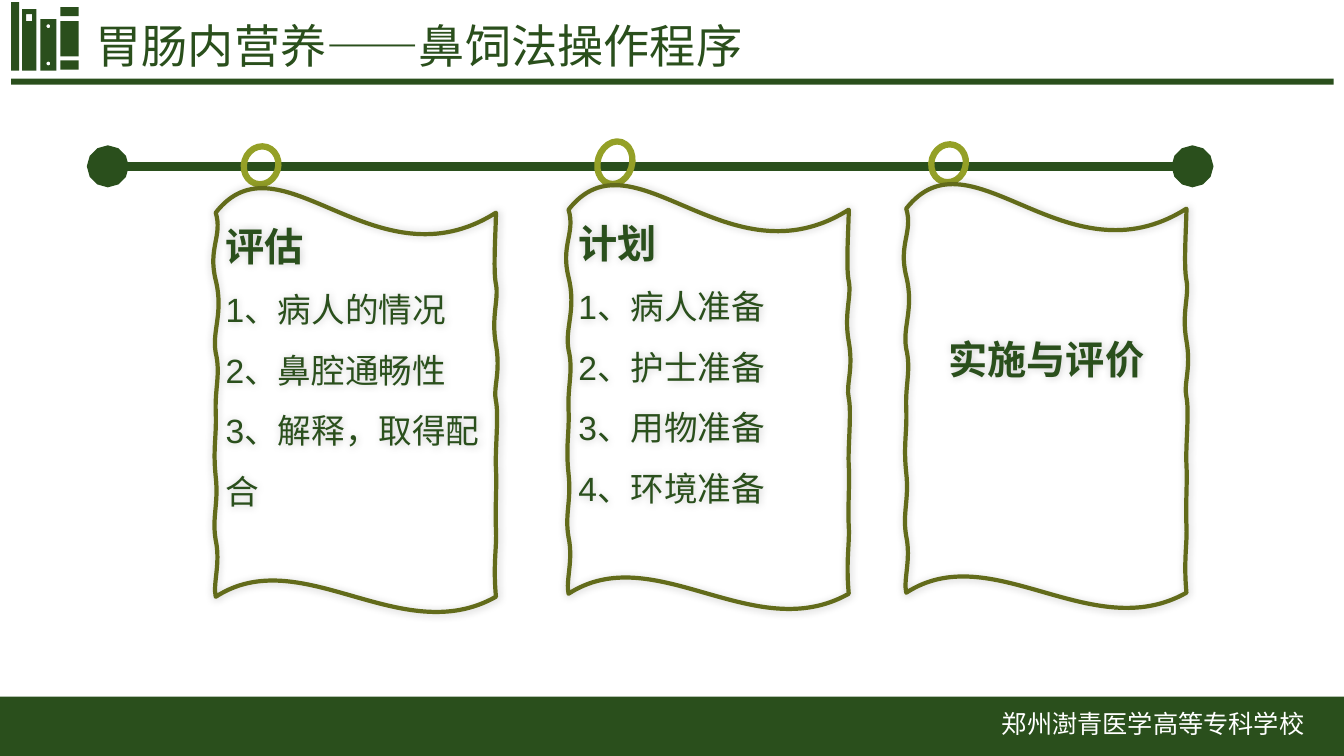
from dataclasses import dataclass

import pptx
import pptx.dml.color
import pptx.enum.shapes
import pptx.enum.text
import pptx.oxml
import pptx.oxml.ns
import pptx.util
from pptx.util import Inches

SHAPE = pptx.enum.shapes.MSO_SHAPE
ALIGN = pptx.enum.text.PP_ALIGN
ANCHOR = pptx.enum.text.MSO_ANCHOR
COLORS = {"green": "2A4F1C", "ring": "94A027", "edge": "626B1A", "white": "FFFFFF", "shadow": "000000"}
A_NS = pptx.oxml.ns.nsdecls("a")

Point = tuple[float, float]
Box = tuple[float, float, float, float]
# A start point, then segments: one point for a line, three for a Bezier curve
Contour = tuple[Point, list[tuple[Point, ...]]]


@dataclass
class Sheet:
    left: float
    top: float
    heading: str
    items: list[str]
    ring: Box
    align: ALIGN = ALIGN.LEFT
    inset_top: float = 0.05


def rect_contour(left: float, top: float, width: float, height: float) -> Contour:
    right, bottom = left + width, top + height
    return (left, top), [((right, top),), ((right, bottom),), ((left, bottom),)]


def dot_contour(x: float, y: float, radius: float = 0.02) -> Contour:
    k = radius * 0.55
    r = radius
    return (x, y - r), [
        ((x + k, y - r), (x + r, y - k), (x + r, y)),
        ((x + r, y + k), (x + k, y + r), (x, y + r)),
        ((x - k, y + r), (x - r, y + k), (x - r, y)),
        ((x - r, y - k), (x - k, y - r), (x, y - r)),
    ]


BARS: list[Box] = [
    (0.11, 0.78, 13.12, 0.06),  # title rule
    (0.11, 0.02, 0.08, 0.68),  # books
    (0.6, 0.6, 0.18, 0.09),
    (0.6, 0.21, 0.18, 0.35),
    (0.6, 0.07, 0.18, 0.09),
    (0, 6.91, 13.333, 0.59),  # footer band
]

BOOKS_WITH_HOLES: list[tuple[Box, list[Contour]]] = [
    ((0.4, 0.19, 0.16, 0.51), [dot_contour(0.08, 0.07), dot_contour(0.08, 0.44)]),
    ((0.22, 0.09, 0.14, 0.61), [rect_contour(0.04, 0.05, 0.06, 0.07)]),
]

SHEETS = [
    Sheet(2.14, 1.92, "评估", ["1、病人的情况", "2、鼻腔通畅性", "3、解释，取得配合"],
          (2.42, 1.45, 0.34, 0.38)),
    Sheet(5.64, 1.89, "计划", ["1、病人准备", "2、护士准备", "3、用物准备", "4、环境准备"],
          (5.93, 1.4, 0.34, 0.43)),
    Sheet(8.99, 1.88, "实施与评价", [], (9.24, 1.43, 0.34, 0.38), ALIGN.CENTER, 1.21),
]

SHEET_SIZE = (2.78, 4.19)
SHEET_OUTLINE: Contour = (0, 0.19), [
    ((0.64, -0.63), (1.58, 0.95), (2.78, 0.19)),
    ((2.78, 0.34), (2.75, 0.76), (2.78, 0.9)),
    ((2.81, 1.05), (2.73, 1.22), (2.78, 1.5)),
    ((2.83, 1.78), (2.75, 1.92), (2.78, 2.06)),
    ((2.81, 2.2), (2.77, 2.55), (2.78, 2.73)),
    ((2.79, 2.91), (2.77, 3.14), (2.78, 3.33)),
    ((2.79, 3.51), (2.75, 3.67), (2.78, 4)),
    ((1.84, 4.53), (0.85, 3.45), (0, 4)),
    ((-0.03, 3.87), (0.05, 3.67), (0, 3.44)),
    ((-0.04, 3.21), (0.03, 3.08), (0, 2.81)),
    ((-0.03, 2.53), (0.01, 2.41), (0, 2.17)),
    ((-0.01, 1.93), (0.05, 1.79), (0, 1.58)),
    ((-0.04, 1.36), (0.08, 1.19), (0, 0.86)),
    ((-0.08, 0.54), (0.07, 0.42), (0, 0.19)),
]


def rgb(name: str) -> pptx.dml.color.RGBColor:
    return pptx.dml.color.RGBColor.from_string(COLORS[name])


def write(p, text: str, *, size: float, font: str = "Arial", color: str = "green",
          bold: bool = False, align: ALIGN = ALIGN.LEFT, spacing: float = 1.0) -> None:
    p.alignment = align
    p.line_spacing = spacing
    r = p.add_run()
    r.text = text
    r.font.size = pptx.util.Pt(size)
    r.font.name = font
    r.font.bold = bold
    r.font.color.rgb = rgb(color)


def add_label(shapes, box: Box, text: str, anchor: ANCHOR, bottom: float = 0.05, **fmt) -> None:
    tf = shapes.add_textbox(*map(Inches, box)).text_frame
    tf.word_wrap = True
    tf.vertical_anchor = anchor
    tf.margin_bottom = Inches(bottom)
    write(tf.paragraphs[0], text, **fmt)


def fill_plain(sp) -> None:
    sp.shadow.inherit = False
    sp.fill.solid()
    sp.fill.fore_color.rgb = rgb("green")
    sp.line.fill.background()


def outline(sp, color: str, width: float) -> None:
    """Leave the shape unfilled with a plain line."""
    sp.fill.background()
    sp.line.color.rgb = rgb(color)
    sp.line.width = pptx.util.Pt(width)
    sp.shadow.inherit = False


def add_freeform(shapes, box: Box, contours: list[Contour]):
    """Build a freeform whose contours, relative to the box, may hold curves."""
    left, top, width, height = map(Inches, box)
    builder = shapes.build_freeform(left, top)
    builder.add_line_segments([(left + width, top), (left + width, top + height)])
    sp = builder.convert_to_shape()
    geometry = next(sp._element.iter(pptx.oxml.ns.qn("a:path")))
    for child in list(geometry):
        geometry.remove(child)

    def add_step(tag: str, points: tuple[Point, ...]) -> None:
        pts = "".join(f'<a:pt x="{Inches(x)}" y="{Inches(y)}"/>' for x, y in points)
        geometry.append(pptx.oxml.parse_xml(f"<a:{tag} {A_NS}>{pts}</a:{tag}>"))

    for start, segments in contours:
        add_step("moveTo", (start,))
        for points in segments:
            add_step("cubicBezTo" if len(points) == 3 else "lnTo", points)
        add_step("close", ())
    return sp


def add_rod(shapes) -> None:
    rod = shapes.add_connector(pptx.enum.shapes.MSO_CONNECTOR.STRAIGHT,
                               Inches(1.07), Inches(1.65), Inches(11.83), Inches(1.65))
    rod.line.color.rgb = rgb("green")
    rod.line.width = pptx.util.Pt(6)
    ln = rod.line._get_or_add_ln()
    for end in ("headEnd", "tailEnd"):
        ln.append(pptx.oxml.parse_xml(f'<a:{end} {A_NS} type="oval" w="lg" len="lg"/>'))
    rod._element.spPr.append(pptx.oxml.parse_xml(f"<a:effectLst {A_NS}/>"))


def add_ring(shapes, box: Box) -> None:
    sp = shapes.add_shape(SHAPE.FLOWCHART_CONNECTOR, *map(Inches, box))
    sp.rotation = 17.4
    outline(sp, "ring", 4.5)


def add_sheet(shapes, sheet: Sheet) -> None:
    sp = add_freeform(shapes, (sheet.left, sheet.top, *SHEET_SIZE), [SHEET_OUTLINE])
    outline(sp, "edge", 3)
    effects = sp._element.spPr.find(pptx.oxml.ns.qn("a:effectLst"))
    effects.append(pptx.oxml.parse_xml(
        f'<a:outerShdw {A_NS} blurRad="76200" dist="0" dir="18900000" algn="bl" rotWithShape="0">'
        f'<a:srgbClr val="{COLORS["shadow"]}"><a:alpha val="20000"/></a:srgbClr></a:outerShdw>'))
    tf = sp.text_frame
    tf.word_wrap = True
    tf.vertical_anchor = ANCHOR.TOP
    tf.margin_top = Inches(sheet.inset_top)
    write(tf.paragraphs[0], sheet.heading, size=28, bold=True, align=sheet.align, spacing=1.5)
    for item in sheet.items:
        write(tf.add_paragraph(), item, size=24, align=sheet.align, spacing=1.5)


def main() -> None:
    prs = pptx.Presentation()
    prs.slide_width, prs.slide_height = Inches(13.333), Inches(7.5)
    s = prs.slides.add_slide(prs.slide_layouts[6])
    for bar in BARS:
        fill_plain(s.shapes.add_shape(SHAPE.RECTANGLE, *map(Inches, bar)))
    for box, holes in BOOKS_WITH_HOLES:
        fill_plain(add_freeform(s.shapes, box, [*holes, rect_contour(0, 0, *box[2:])]))
    add_label(s.shapes, (0.85, 0.17, 11.5, 0.67), "胃肠内营养——鼻饲法操作程序", ANCHOR.MIDDLE,
              bottom=0.1, size=33, font="Montserrat", spacing=0.9)
    add_rod(s.shapes)
    for sheet in SHEETS:
        add_ring(s.shapes, sheet.ring)
    for sheet in SHEETS:
        add_sheet(s.shapes, sheet)
    add_label(s.shapes, (9.55, 6.98, 3.78, 0.46), "郑州澍青医学高等专科学校", ANCHOR.TOP,
              size=18, font="Noto Sans CJK SC", color="white", align=ALIGN.CENTER)
    prs.save("out.pptx")


if __name__ == "__main__":
    main()
